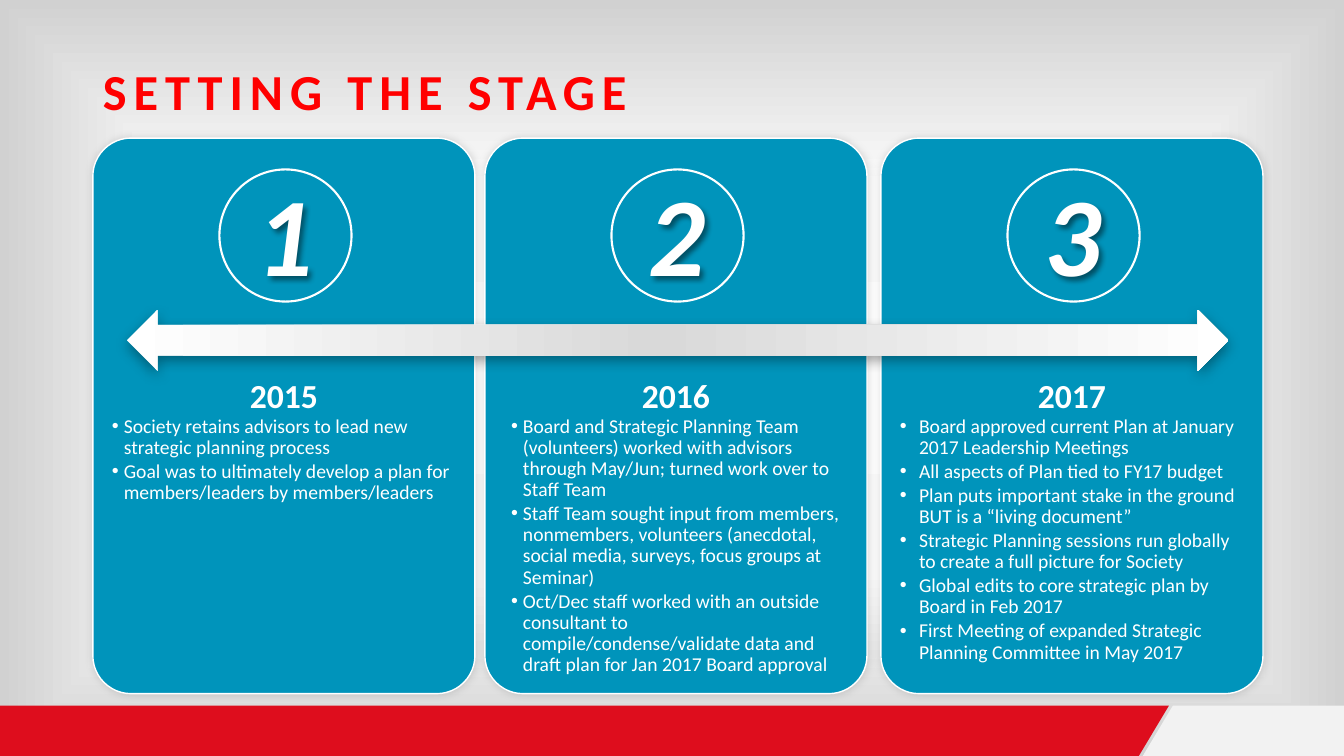
from dataclasses import dataclass

from pptx import Presentation
from pptx.dml.color import RGBColor
from pptx.enum.shapes import MSO_SHAPE
from pptx.enum.text import MSO_ANCHOR, MSO_AUTO_SIZE, PP_ALIGN
from pptx.oxml import parse_xml
from pptx.oxml.ns import nsdecls, qn
from pptx.util import Cm, Pt

ROUNDED = MSO_SHAPE.ROUNDED_RECTANGLE
OVAL = MSO_SHAPE.OVAL
DOUBLE_ARROW = MSO_SHAPE.LEFT_RIGHT_ARROW
TOP = MSO_ANCHOR.TOP
LEFT, CENTER = PP_ALIGN.LEFT, PP_ALIGN.CENTER
NO_FIT, GROW = MSO_AUTO_SIZE.NONE, MSO_AUTO_SIZE.SHAPE_TO_FIT_TEXT

WHITE = RGBColor(0xFF, 0xFF, 0xFF)
NEAR_WHITE = RGBColor(0xFB, 0xFB, 0xFB)
PALE_GRAY = RGBColor(0xF2, 0xF2, 0xF2)
SILVER = RGBColor(0xD9, 0xD9, 0xD9)
EDGE_GRAY = RGBColor(0xD1, 0xD1, 0xD1)
TEAL = RGBColor(0x00, 0x94, 0xBB)
TITLE_RED = RGBColor(0xFF, 0x00, 0x00)
FOOTER_RED = RGBColor(0xDE, 0x0D, 0x1D)

FONT = "Calibri"
CARD_TOP, CARD_WIDTH, CARD_HEIGHT = Cm(3.48), Cm(9.63), Cm(14)
RADIAL = ('<a:path path="shape"><a:fillToRect l="50000" t="50000" '
          'r="50000" b="50000"/></a:path>')
LINEAR = '<a:lin ang="0" scaled="0"/>'


@dataclass
class Stage:
    """One year of the planning process."""
    left: int
    year: str
    margin: float
    hanging: float
    points: list


STAGES = [
    Stage(Cm(2.34), "2015", 0.3, 0.3, [
        "Society retains advisors to lead new strategic planning process",
        "Goal was to ultimately develop a plan for members/leaders by members/leaders",
    ]),
    Stage(Cm(12.22), "2016", 0.48, 0.3, [
        "Board and Strategic Planning Team (volunteers) worked with advisors "
        "through May/Jun; turned work over to Staff Team",
        "Staff Team sought input from members, nonmembers, volunteers (anecdotal, "
        "social media, surveys, focus groups at Seminar)",
        "Oct/Dec staff worked with an outside consultant to compile/condense/validate "
        "data and draft plan for Jan 2017 Board approval",
    ]),
    Stage(Cm(22.2), "2017", 0.48, 0.48, [
        "Board approved current Plan at January 2017 Leadership Meetings",
        "All aspects of Plan tied to FY17 budget",
        "Plan puts important stake in the ground BUT is a “living document”",
        "Strategic Planning sessions run globally to create a full picture for Society",
        "Global edits to core strategic plan by Board in Feb 2017",
        "First Meeting of expanded Strategic Planning Committee in May 2017",
    ]),
]


def apply_gradient(element, stops, direction):
    """Replace the first solid fill in an element with a gradient."""
    stop_xml = "".join(
        f'<a:gs pos="{percent * 1000}"><a:srgbClr val="{color}"/></a:gs>'
        for percent, color in stops)
    solid = next(element.iter(qn("a:solidFill")))
    solid.getparent().replace(solid, parse_xml(
        f'<a:gradFill {nsdecls("a")} rotWithShape="1"><a:gsLst>{stop_xml}</a:gsLst>'
        f'{direction}</a:gradFill>'))


def add_shadow(shape, opacity, blur, distance, angle):
    """Give a shape a soft black outer shadow."""
    shape.shadow.inherit = False
    shape.element.spPr.find(qn("a:effectLst")).append(parse_xml(
        f'<a:outerShdw {nsdecls("a")} blurRad="{Pt(blur)}" dist="{Pt(distance)}" '
        f'dir="{angle * 60000}" algn="ctr" rotWithShape="0"><a:srgbClr val="000000">'
        f'<a:alpha val="{opacity * 1000}"/></a:srgbClr></a:outerShdw>'))


def format_runs(paragraph, size, color, bold=False, italic=False):
    """Format every run of a paragraph."""
    for run in paragraph.runs:
        font = run.font
        font.name, font.size = FONT, Pt(size)
        font.bold, font.italic = bold, italic
        font.color.rgb = color


def set_bullet(paragraph, margin, hanging, character=None):
    """Set a hanging indent and a bullet, or no bullet at all."""
    properties = paragraph._p.get_or_add_pPr()
    properties.set("marL", str(Cm(margin)))
    properties.set("indent", str(-Cm(hanging)))
    if character:
        properties.append(parse_xml(f'<a:buFont {nsdecls("a")} typeface="Arial"/>'))
        properties.append(parse_xml(f'<a:buChar {nsdecls("a")} char="{character}"/>'))
    else:
        properties.append(parse_xml(f'<a:buNone {nsdecls("a")}/>'))


def place(shape, left, top, width, height):
    """Move and size a shape."""
    shape.left, shape.top, shape.width, shape.height = left, top, width, height


def add_footer(slide, left, top, width, height):
    """Draw the slanted red and pale footer bands."""
    right, bottom = left + width, top + height
    bands = [
        (FOOTER_RED, [(left, top), (Cm(29.46), top), (Cm(28.7), bottom), (left, bottom)]),
        (PALE_GRAY, [(Cm(29.56), top), (right, top), (right, bottom), (Cm(28.8), bottom)]),
    ]
    for color, corners in bands:
        builder = slide.shapes.build_freeform(*corners[0])
        builder.add_line_segments(corners[1:], close=True)
        band = builder.convert_to_shape()
        band.shadow.inherit = False
        band.fill.solid()
        band.fill.fore_color.rgb = color
        band.line.fill.background()


def fill_stage_text(body, stage):
    """Write the year and its bullet points."""
    frame = body.text_frame
    frame.text = "\n".join([stage.year, *stage.points])
    frame.word_wrap, frame.auto_size, frame.vertical_anchor = True, NO_FIT, TOP
    frame.margin_left = frame.margin_right = Cm(0.48)
    frame.margin_top = frame.margin_bottom = Cm(0.48)
    for paragraph in frame.paragraphs:
        paragraph.line_spacing = 0.9
        paragraph.space_before = paragraph.space_after = Pt(0)
    heading, *points = frame.paragraphs
    heading.alignment = CENTER
    set_bullet(heading, 0, 0)
    format_runs(heading, 24, WHITE, bold=True)
    for paragraph in points:
        paragraph.level, paragraph.alignment = 1, LEFT
        paragraph.space_after = Pt(2)
        set_bullet(paragraph, stage.margin, stage.hanging, "•")
        format_runs(paragraph, 14, WHITE)


def add_card(slide, body, stage, number, left, top, width, height):
    """Draw one numbered card with its text."""
    card = slide.shapes.add_shape(ROUNDED, left, top, width, height)
    card.adjustments[0] = 0.1
    card.fill.solid()
    card.fill.fore_color.rgb = TEAL
    card.line.color.rgb, card.line.width = WHITE, Pt(1)
    add_shadow(card, 12, 6, 0, 315)

    place(body, left, top + Cm(5.61), width, Cm(5.59))
    slide.shapes.element.append(body.element)
    fill_stage_text(body, stage)

    circle = slide.shapes.add_shape(OVAL, left + Cm(3.19), top + Cm(0.79), Cm(3.33), Cm(3.33))
    circle.shadow.inherit = False
    circle.fill.background()
    circle.line.color.rgb, circle.line.width = WHITE, Pt(1.5)

    numeral = slide.shapes.add_textbox(left + Cm(2.9), top + Cm(0.55), Cm(3.86), Cm(3.68))
    numeral.text_frame.word_wrap = True
    numeral.text_frame.auto_size = GROW
    paragraph = numeral.text_frame.paragraphs[0]
    paragraph.text, paragraph.alignment = str(number), CENTER
    format_runs(paragraph, 80, WHITE, bold=True, italic=True)
    add_shadow(numeral, 45, 4, 3, 45)


def add_timeline_arrow(slide, left, top, width, height):
    """Draw the double arrow across the cards."""
    arrow = slide.shapes.add_shape(DOUBLE_ARROW, left, top, width, height)
    arrow.fill.solid()
    arrow.line.fill.background()
    apply_gradient(arrow.element.spPr, [(0, WHITE), (48, SILVER), (100, WHITE)], LINEAR)
    add_shadow(arrow, 34, 9, 3, 90)


def set_title(title, left, top, width, height):
    """Write the slide title."""
    place(title, left, top, width, height)
    frame = title.text_frame
    frame.text = "SETTING THE STAGE"
    frame.word_wrap, frame.auto_size, frame.vertical_anchor = True, NO_FIT, TOP
    paragraph = frame.paragraphs[0]
    paragraph.alignment, paragraph.line_spacing = LEFT, 0.9
    format_runs(paragraph, 36, TITLE_RED, bold=True)
    paragraph.runs[0].font._element.set("spc", "500")


def main():
    """Build and save the presentation."""
    presentation = Presentation()
    presentation.slide_width, presentation.slide_height = Cm(33.87), Cm(19.05)
    slide = presentation.slides.add_slide(presentation.slide_layouts.get_by_name("Comparison"))
    slide.background.fill.solid()
    slide.background.fill.fore_color.rgb = WHITE
    apply_gradient(slide.element, [(0, WHITE), (51, NEAR_WHITE), (100, EDGE_GRAY)], RADIAL)
    title, *bodies = list(slide.placeholders)
    add_footer(slide, 0, Cm(17.78), presentation.slide_width, Cm(1.27))
    for number, (stage, body) in enumerate(zip(STAGES, bodies), start=1):
        add_card(slide, body, stage, number, stage.left, CARD_TOP, CARD_WIDTH, CARD_HEIGHT)
    for unused in bodies[len(STAGES):]:
        slide.shapes.element.remove(unused.element)
    add_timeline_arrow(slide, Cm(3.2), Cm(7.8), Cm(27.76), Cm(1.55))
    set_title(title, Cm(2.34), Cm(1.57), Cm(30.38), Cm(2.72))
    presentation.save("out.pptx")


if __name__ == "__main__":
    main()
